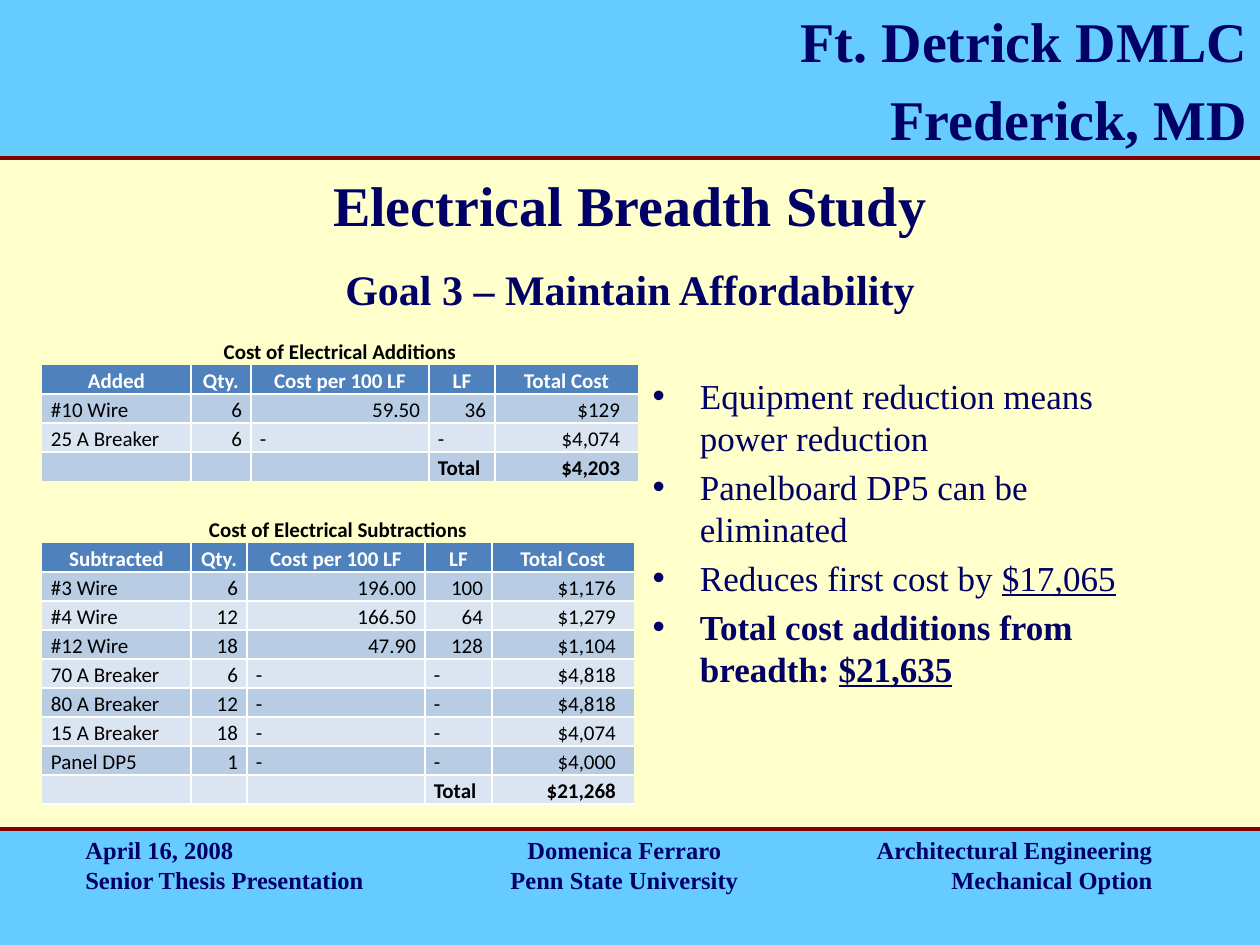
from dataclasses import dataclass

from lxml import etree
from pptx import Presentation
from pptx.dml.color import RGBColor
from pptx.enum.shapes import MSO_CONNECTOR, MSO_SHAPE
from pptx.enum.text import MSO_ANCHOR, MSO_AUTO_SIZE, PP_ALIGN
from pptx.oxml.ns import qn
from pptx.util import Emu, Pt

LEFT, CENTER, RIGHT = PP_ALIGN.LEFT, PP_ALIGN.CENTER, PP_ALIGN.RIGHT
TOP, MIDDLE, BOTTOM = MSO_ANCHOR.TOP, MSO_ANCHOR.MIDDLE, MSO_ANCHOR.BOTTOM
RECTANGLE, STRAIGHT = MSO_SHAPE.RECTANGLE, MSO_CONNECTOR.STRAIGHT
NO_AUTOFIT = MSO_AUTO_SIZE.NONE

EMU_PER_PX = 914400 / 126
SLIDE_WIDTH, SLIDE_HEIGHT = 1260, 945
HEADER_LINE_Y, FOOTER_Y = 158, 829
ROW_HEIGHT = 28
CELL_MARGIN, COST_MARGIN = 9, 18
SERIF, SANS = "Times New Roman", "Calibri"
PLAIN_TABLE_STYLE = "{2D5ABB26-0587-4C30-8999-92F81FD0307C}"
COLORS = {
    "background": "FFFFCC", "band": "66CCFF", "rule": "800000", "navy": "000066",
    "table_header": "4F81BD", "dark_row": "B8CCE4", "light_row": "DBE5F1",
    "white": "FFFFFF", "black": "000000",
}


@dataclass
class Box:
    left: int
    top: int
    width: int
    height: int


@dataclass
class Footer:
    left: int
    alignment: PP_ALIGN
    lines: list[str]


@dataclass
class CostTable:
    title: str
    top: int
    column_widths: list[int]
    rows: list[list[str]]
    closing_line: bool


FOOTERS = [
    Footer(840, RIGHT, ["Architectural Engineering", "Mechanical Option"]),
    Footer(462, CENTER, ["Domenica Ferraro", "Penn State University"]),
    Footer(73, LEFT, ["April 16, 2008", "Senior Thesis Presentation"]),
]
COST_TABLES = [
    CostTable("Cost of Electrical Additions", 336, [149, 60, 178, 66, 143], [
        ["Added", "Qty.", "Cost per 100 LF", "LF", "Total Cost"],
        ["#10 Wire", "6", "59.50", "36", "$129"],
        ["25 A Breaker", "6", "-", "-", "$4,074"],
        ["", "", "", "Total", "$4,203"],
    ], False),
    CostTable("Cost of Electrical Subtractions", 514, [149, 56, 178, 67, 142], [
        ["Subtracted", "Qty.", "Cost per 100 LF", "LF", "Total Cost"],
        ["#3 Wire", "6", "196.00", "100", "$1,176"],
        ["#4 Wire", "12", "166.50", "64", "$1,279"],
        ["#12 Wire", "18", "47.90", "128", "$1,104"],
        ["70 A Breaker", "6", "-", "-", "$4,818"],
        ["80 A Breaker", "12", "-", "-", "$4,818"],
        ["15 A Breaker", "18", "-", "-", "$4,074"],
        ["Panel DP5", "1", "-", "-", "$4,000"],
        ["", "", "", "Total", "$21,268"],
    ], True),
]


def px(length: int) -> Emu:
    return Emu(round(length * EMU_PER_PX))


def color(name: str) -> RGBColor:
    return RGBColor.from_string(COLORS[name])


def place(shape, box: Box) -> None:
    shape.left, shape.top = px(box.left), px(box.top)
    shape.width, shape.height = px(box.width), px(box.height)


def add_run(paragraph, text: str, *, size=20, font=SERIF, color_name="navy",
            bold=False, underline=False) -> None:
    run = paragraph.add_run()
    run.text = text
    run.font.size, run.font.name = Pt(size), font
    run.font.bold, run.font.underline = bold, underline
    run.font.color.rgb = color(color_name)


def write_text(frame, lines: list[str], *, alignment=LEFT, anchor=TOP, gap=0,
               line_spacing=None, **run_format) -> None:
    frame.word_wrap = True
    frame.vertical_anchor = anchor
    for index, line in enumerate(lines):
        paragraph = frame.add_paragraph() if index else frame.paragraphs[0]
        paragraph.alignment = alignment
        paragraph.space_before = Pt(gap if index else 0)
        if line_spacing:
            paragraph.line_spacing = line_spacing
        add_run(paragraph, line, **run_format)


def add_band(slide, box: Box):
    band = slide.shapes.add_shape(RECTANGLE, 0, 0, 0, 0)
    place(band, box)
    band.shadow.inherit = False
    band.fill.solid()
    band.fill.fore_color.rgb = color("band")
    band.line.fill.background()
    return band


def add_rule(slide, y: int) -> None:
    rule = slide.shapes.add_connector(STRAIGHT, px(SLIDE_WIDTH), px(y), 0, px(y))
    rule.line.color.rgb = color("rule")
    rule.line.width = Pt(2)
    etree.SubElement(rule._element.spPr, qn("a:effectLst"))


def add_text_box(slide, box: Box, lines: list[str], **text_format) -> None:
    text_box = slide.shapes.add_textbox(0, 0, 0, 0)
    place(text_box, box)
    write_text(text_box.text_frame, lines, **text_format)


def add_border(cell, side: str, points: float) -> None:
    properties = cell._tc.get_or_add_tcPr()
    line = etree.SubElement(properties, qn(f"a:ln{side}"), w=str(Pt(points)))
    fill = etree.SubElement(line, qn("a:solidFill"))
    etree.SubElement(fill, qn("a:srgbClr"), val=COLORS["white"])


def write_cell(cell, text: str, alignment=LEFT, right_margin=CELL_MARGIN,
               color_name="black", bold=False) -> None:
    cell.margin_left, cell.margin_right = px(CELL_MARGIN), px(right_margin)
    cell.margin_top = cell.margin_bottom = 0
    cell.vertical_anchor = BOTTOM
    if text:
        write_text(cell.text_frame, [text], alignment=alignment, anchor=BOTTOM,
                   line_spacing=1.15, size=12, font=SANS, color_name=color_name, bold=bold)
    else:
        # An empty cell would otherwise stretch its row to the default text size.
        cell.text_frame.paragraphs[0]._p.get_or_add_endParaRPr().set("sz", "1200")


def add_cost_table(slide, data: CostTable) -> None:
    row_count, column_count = len(data.rows) + 1, len(data.column_widths)
    last_row, last_column = row_count - 1, column_count - 1
    table = slide.shapes.add_table(
        row_count, column_count, px(42), px(data.top),
        px(sum(data.column_widths)), px(ROW_HEIGHT * row_count)).table
    table._tbl.tblPr.find(qn("a:tableStyleId")).text = PLAIN_TABLE_STYLE
    table.first_row = table.horz_banding = False
    for column, width in zip(table.columns, data.column_widths):
        column.width = px(width)
    for row in table.rows:
        row.height = px(ROW_HEIGHT)

    title = table.cell(0, 0)
    title.merge(table.cell(0, last_column))
    write_cell(title, data.title, CENTER, bold=True)

    for row_index, values in enumerate(data.rows, start=1):
        header = row_index == 1
        row_fill = "table_header" if header else ("dark_row", "light_row")[row_index % 2]
        for column_index, text in enumerate(values):
            cell = table.cell(row_index, column_index)
            if header:
                write_cell(cell, text, CENTER, color_name="white", bold=True)
            else:
                cost = column_index == last_column
                leading = column_index == 0 or text in ("-", "Total")
                write_cell(cell, text, LEFT if leading else RIGHT,
                           COST_MARGIN if cost else CELL_MARGIN, bold=row_index == last_row)
            borders = [
                ("L", column_index > 0, 1),
                ("R", column_index < last_column, 1),
                ("T", not header, 1.5 if row_index == 2 else 1),
                ("B", row_index < last_row or data.closing_line, 1.5 if header else 1),
            ]
            for side, visible, points in borders:
                if visible:
                    add_border(cell, side, points)
            cell.fill.solid()
            cell.fill.fore_color.rgb = color(row_fill)


def main() -> None:
    presentation = Presentation()
    presentation.slide_width, presentation.slide_height = px(SLIDE_WIDTH), px(SLIDE_HEIGHT)
    slide = presentation.slides.add_slide(presentation.slide_layouts[1])
    slide.background.fill.solid()
    slide.background.fill.fore_color.rgb = color("background")

    add_band(slide, Box(0, FOOTER_Y, SLIDE_WIDTH, SLIDE_HEIGHT - FOOTER_Y))
    header = add_band(slide, Box(0, 0, SLIDE_WIDTH, 160))
    write_text(header.text_frame, ["Ft. Detrick DMLC", "Frederick, MD"],
               alignment=RIGHT, gap=6.4, size=32, bold=True)
    for y in (HEADER_LINE_Y, FOOTER_Y):
        add_rule(slide, y)
    for footer in FOOTERS:
        add_text_box(slide, Box(footer.left, FOOTER_Y, 325, 63), footer.lines,
                     alignment=footer.alignment, size=14, bold=True)

    title, body = slide.placeholders
    place(title, Box(0, 168, SLIDE_WIDTH, 73))
    title.text_frame.auto_size = NO_AUTOFIT
    write_text(title.text_frame, ["Electrical Breadth Study"],
               alignment=CENTER, anchor=MIDDLE, size=32, bold=True)
    add_text_box(slide, Box(0, 252, SLIDE_WIDTH, 73), ["Goal 3 – Maintain Affordability"],
                 alignment=CENTER, anchor=MIDDLE, size=24, bold=True)

    for data in COST_TABLES:
        add_cost_table(slide, data)

    place(body, Box(640, 368, 557, 462))
    body.text_frame.auto_size = NO_AUTOFIT
    write_text(body.text_frame, [
        "Equipment reduction means power reduction",
        "Panelboard DP5 can be eliminated",
        "Reduces first cost by ",
    ], gap=4)
    add_run(body.text_frame.paragraphs[-1], "$17,065", underline=True)
    conclusion = body.text_frame.add_paragraph()
    conclusion.space_before = Pt(4)
    add_run(conclusion, "Total cost additions from breadth: ", bold=True)
    add_run(conclusion, "$21,635", bold=True, underline=True)

    presentation.save("out.pptx")


if __name__ == "__main__":
    main()
